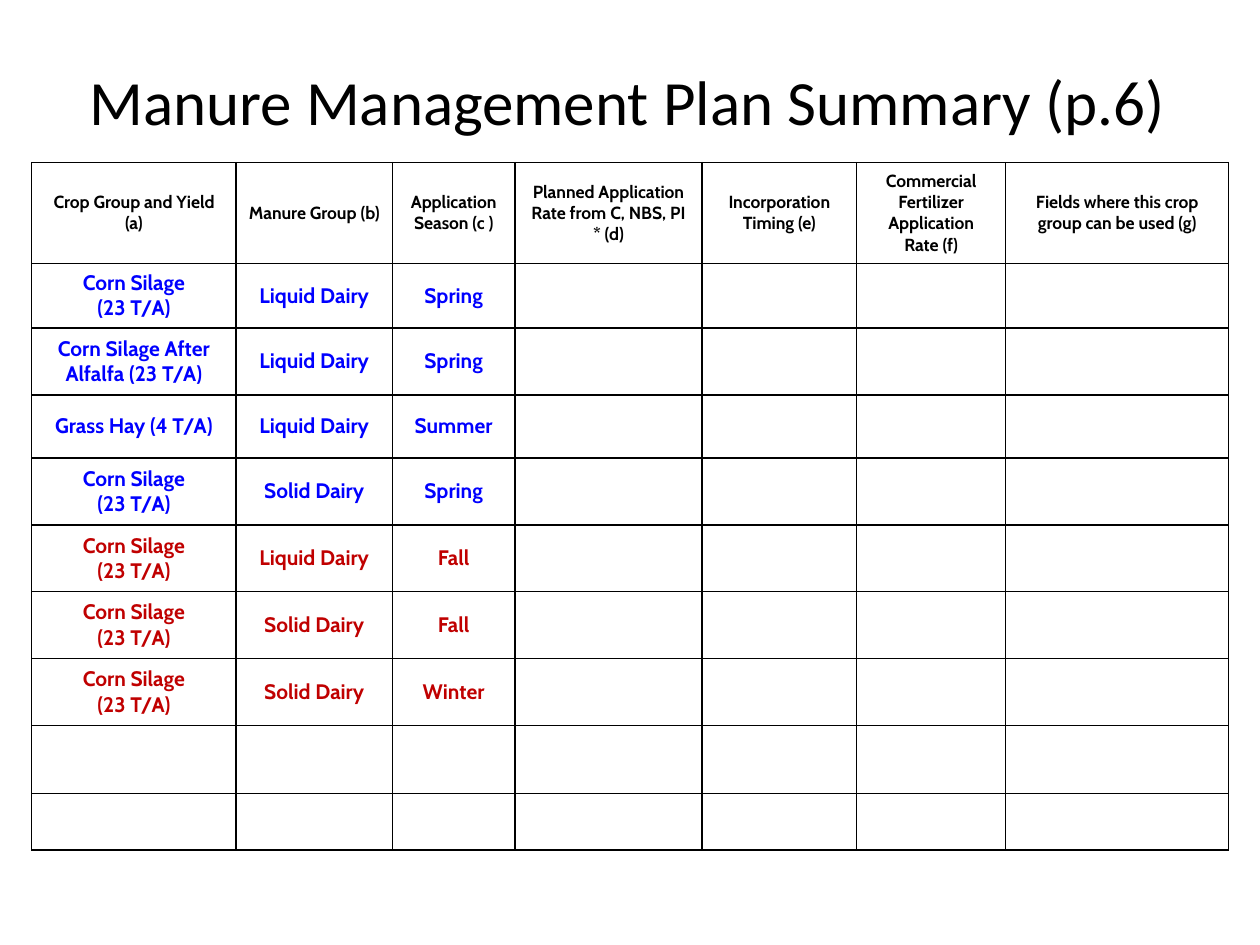
from lxml import etree
from pptx import Presentation
from pptx.dml.color import RGBColor
from pptx.enum.text import MSO_ANCHOR, MSO_AUTO_SIZE, PP_ALIGN
from pptx.oxml.ns import qn
from pptx.util import Cm, Pt

LEFT, CENTER = PP_ALIGN.LEFT, PP_ALIGN.CENTER
MIDDLE = MSO_ANCHOR.MIDDLE
NO_AUTOFIT = MSO_AUTO_SIZE.NONE
TITLE_ONLY = 5

COLORS = {"black": "000000", "white": "FFFFFF", "blue": "0000FF", "red": "C00000"}

COLUMN_WIDTHS = [4.12, 3.15, 2.47, 3.77, 3.12, 3.0, 4.5]
ROW_HEIGHTS = [2.03, 1.3, 1.35, 1.27, 1.35, 1.35, 1.35, 1.35, 1.37, 1.14]

HEADERS = [
    "Crop Group and Yield (a)",
    "Manure Group (b)",
    "Application Season (c )",
    "Planned Application Rate from C, NBS, PI * (d)",
    "Incorporation Timing (e)",
    "Commercial Fertilizer Application Rate (f)",
    "Fields where this crop group can be used (g)",
]
CORN_SILAGE = "Corn Silage\n(23 T/A)"
SPRING_SUMMER_PLANS = [
    (CORN_SILAGE, "Liquid Dairy", "Spring"),
    ("Corn Silage After Alfalfa (23 T/A)", "Liquid Dairy", "Spring"),
    ("Grass Hay (4 T/A)", "Liquid Dairy", "Summer"),
    (CORN_SILAGE, "Solid Dairy", "Spring"),
]
FALL_WINTER_PLANS = [
    (CORN_SILAGE, "Liquid Dairy", "Fall"),
    (CORN_SILAGE, "Solid Dairy", "Fall"),
    (CORN_SILAGE, "Solid Dairy", "Winter"),
]


def write_text(text_frame, text, *, font, size, color="black", bold=False, align=CENTER):
    """Fill the frame, one paragraph for each line of the text."""
    text_frame.text = text
    for paragraph in text_frame.paragraphs:
        paragraph.alignment = align
        for run in paragraph.runs:
            run.font.name = font
            run.font.size = Pt(size)
            run.font.bold = bold
            run.font.color.rgb = RGBColor.from_string(COLORS[color])


class SlideBuilder:
    """Holds the fonts, the border width and the current slide."""

    title_font = "Calibri"
    table_font = "Cabin"
    border_width = Pt(1)

    def __init__(self, slide):
        self.slide = slide

    def add_title(self, text, left, top, width, height):
        title = self.slide.shapes.title
        title.left, title.top = Cm(left), Cm(top)
        title.width, title.height = Cm(width), Cm(height)
        frame = title.text_frame
        frame.margin_left = frame.margin_right = 0
        frame.vertical_anchor = MIDDLE
        frame.word_wrap = True
        frame.auto_size = NO_AUTOFIT
        write_text(frame, text, font=self.title_font, size=36, align=LEFT)

    def add_table(self, left, top, column_widths, row_heights):
        frame = self.slide.shapes.add_table(
            len(row_heights), len(column_widths), Cm(left), Cm(top),
            Cm(sum(column_widths)), Cm(sum(row_heights)))
        table = frame.table
        table.first_row = table.horz_banding = False
        for column, width in zip(table.columns, column_widths):
            column.width = Cm(width)
        for row, height in zip(table.rows, row_heights):
            row.height = Cm(height)
        for cell in table.iter_cells():
            self.add_borders(cell)
            cell.fill.solid()
            cell.fill.fore_color.rgb = RGBColor.from_string(COLORS["white"])
            cell.vertical_anchor = MIDDLE
        return table

    def add_borders(self, cell):
        properties = cell._tc.get_or_add_tcPr()
        for side in ("a:lnL", "a:lnR", "a:lnT", "a:lnB"):
            line = etree.SubElement(properties, qn(side), w=str(self.border_width))
            fill = etree.SubElement(line, qn("a:solidFill"))
            etree.SubElement(fill, qn("a:srgbClr"), val=COLORS["black"])

    def fill_row(self, table, row, texts, size, color):
        for column, text in enumerate(texts):
            write_text(table.cell(row, column).text_frame, text,
                       font=self.table_font, size=size, color=color, bold=True)


def main():
    presentation = Presentation()
    presentation.slide_width, presentation.slide_height = Cm(25.4), Cm(19.05)
    layout = presentation.slide_layouts[TITLE_ONLY]
    builder = SlideBuilder(presentation.slides.add_slide(layout))

    builder.add_title("Manure Management Plan Summary (p.6)", 1.8, 1.0, 22.63, 2.03)
    table = builder.add_table(0.64, 3.28, COLUMN_WIDTHS, ROW_HEIGHTS)
    builder.fill_row(table, 0, HEADERS, 10, "black")
    plans = [(plan, "blue") for plan in SPRING_SUMMER_PLANS]
    plans += [(plan, "red") for plan in FALL_WINTER_PLANS]
    for row, (plan, color) in enumerate(plans, start=1):
        builder.fill_row(table, row, plan, 12, color)

    presentation.save("out.pptx")


if __name__ == "__main__":
    main()
